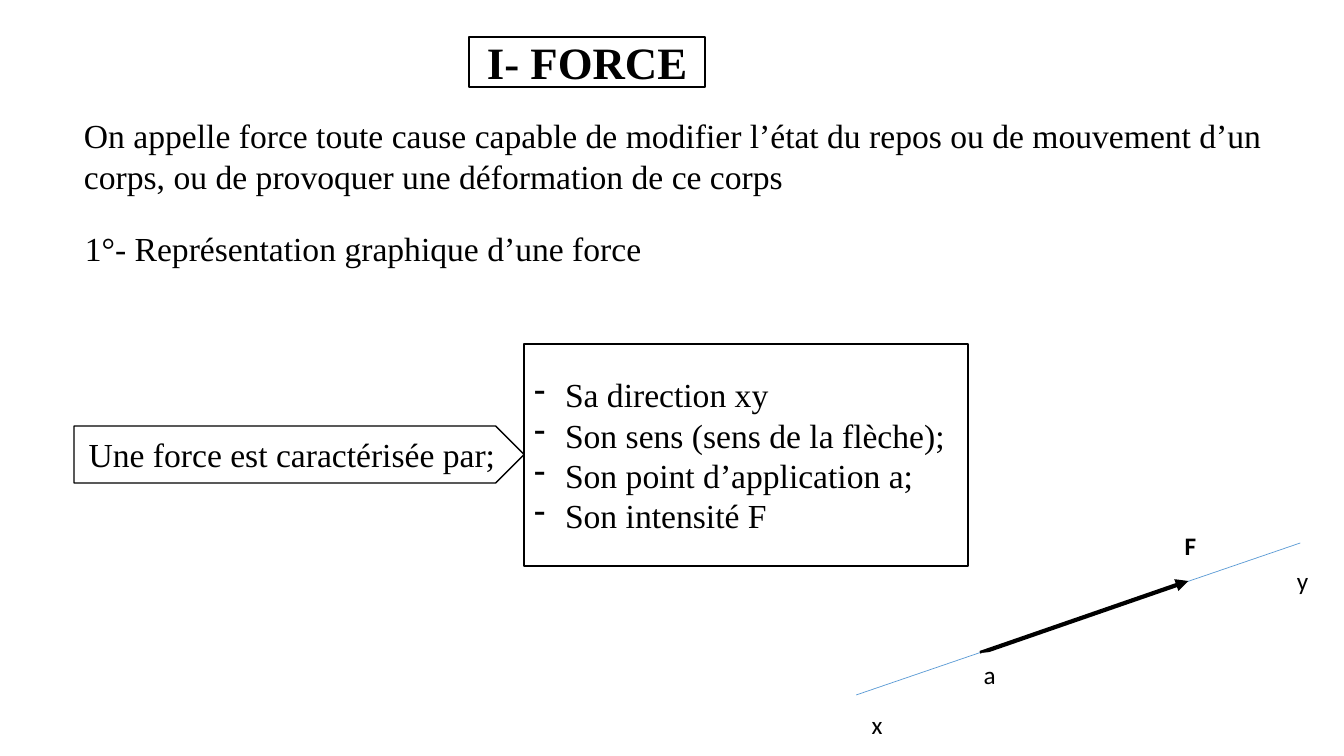
from lxml import etree
from pptx import Presentation, util as u
from pptx.dml.color import RGBColor
from pptx.enum import shapes, text
from pptx.oxml.ns import qn

PX = u.Inches(1) / 100.8
BLACK, WHITE, BLUE = "000000", "FFFFFF", "5B9BD5"
SERIF, SANS = "Times New Roman", "Calibri"
LEFT, CENTER = text.PP_ALIGN.LEFT, text.PP_ALIGN.CENTER
RECT, PENTAGON, OVAL = (shapes.MSO_SHAPE.RECTANGLE, shapes.MSO_SHAPE.PENTAGON,
                        shapes.MSO_SHAPE.OVAL)

TITLE = "I- FORCE"
TITLE_BOX = (469, 37, 236, 50)
STATEMENTS = [
    ("On appelle force toute cause capable de modifier l’état du repos ou de "
     "mouvement d’un corps, ou de provoquer une déformation de ce corps",
     RECT, (74, 105, 1206, 101), WHITE, LEFT),
    ("1°- Représentation graphique d’une force",
     RECT, (74, 206, 578, 84), WHITE, CENTER),
    ("Une force est caractérisée par;",
     PENTAGON, (74, 426, 450, 57), BLACK, CENTER),
]
FEATURES = ["Sa direction xy", "Son sens (sens de la flèche);",
            "Son point d’application a;", "Son intensité F"]
FEATURES_BOX = (524, 344, 444, 222)
FEATURE_INDENT = 31
AXIS = (856, 695, 1300, 543)
FORCE = (980, 653, 1188, 581)
LABEL_SIZE = (38, 42)
LABELS = [("x", 856, 703, False), ("y", 1281, 559, False),
          ("a", 968, 653, False), ("F", 1169, 524, True)]


def emu(lengths):
    return [round(length * PX) for length in lengths]


def rgb(value):
    return RGBColor.from_string(value)


def write(shape, lines, outline, align, font, size, bold=False, dash=False):
    shape.fill.solid()
    shape.fill.fore_color.rgb = rgb(WHITE)
    shape.line.color.rgb = rgb(outline)
    shape.line.width = u.Pt(1)
    frame = shape.text_frame
    frame.text = "\n".join(lines)
    frame.word_wrap = True
    frame.auto_size = text.MSO_AUTO_SIZE.NONE
    frame.vertical_anchor = text.MSO_ANCHOR.MIDDLE
    for paragraph in frame.paragraphs:
        if dash:
            indent = round(FEATURE_INDENT * PX)
            props = paragraph._p.get_or_add_pPr()
            props.set("marL", str(indent))
            props.set("indent", str(-indent))
            etree.SubElement(props, qn("a:buChar")).set("char", "-")
        paragraph.alignment = align
        paragraph.line_spacing = 1.0
        paragraph.font.name = font
        paragraph.font.size = u.Pt(size)
        paragraph.font.bold = bold
        paragraph.font.color.rgb = rgb(BLACK)


def add_box(slide, kind, box, *args, **options):
    shape = slide.shapes.add_shape(kind, *emu(box))
    shape.shadow.inherit = False
    write(shape, *args, **options)


def add_line(slide, ends, color, width, arrow=False):
    line = slide.shapes.add_connector(shapes.MSO_CONNECTOR.STRAIGHT, *emu(ends))
    line.line.color.rgb = rgb(color)
    line.line.width = u.Pt(width)
    if arrow:
        tail = etree.SubElement(line.line._get_or_add_ln(), qn("a:tailEnd"))
        tail.set("type", "triangle")
    etree.SubElement(line._element.spPr, qn("a:effectLst"))


def main():
    deck = Presentation()
    deck.slide_width, deck.slide_height = u.Inches(13.33), u.Inches(7.5)
    slide = deck.slides.add_slide(deck.slide_layouts[5])

    title = slide.shapes.title
    title.left, title.top, title.width, title.height = emu(TITLE_BOX)
    write(title, [TITLE], BLACK, CENTER, SERIF, 32, bold=True)

    for words, kind, box, outline, align in STATEMENTS:
        add_box(slide, kind, box, [words], outline, align, SERIF, 24)
    add_box(slide, RECT, FEATURES_BOX, FEATURES, BLACK, LEFT, SERIF, 24, dash=True)

    add_line(slide, AXIS, BLUE, 0.5)
    add_line(slide, FORCE, BLACK, 3, arrow=True)
    for letter, left, top, bold in LABELS:
        add_box(slide, OVAL, (left, top, *LABEL_SIZE), [letter], WHITE, CENTER,
                SANS, 18, bold=bold)

    deck.save("out.pptx")


if __name__ == "__main__":
    main()
